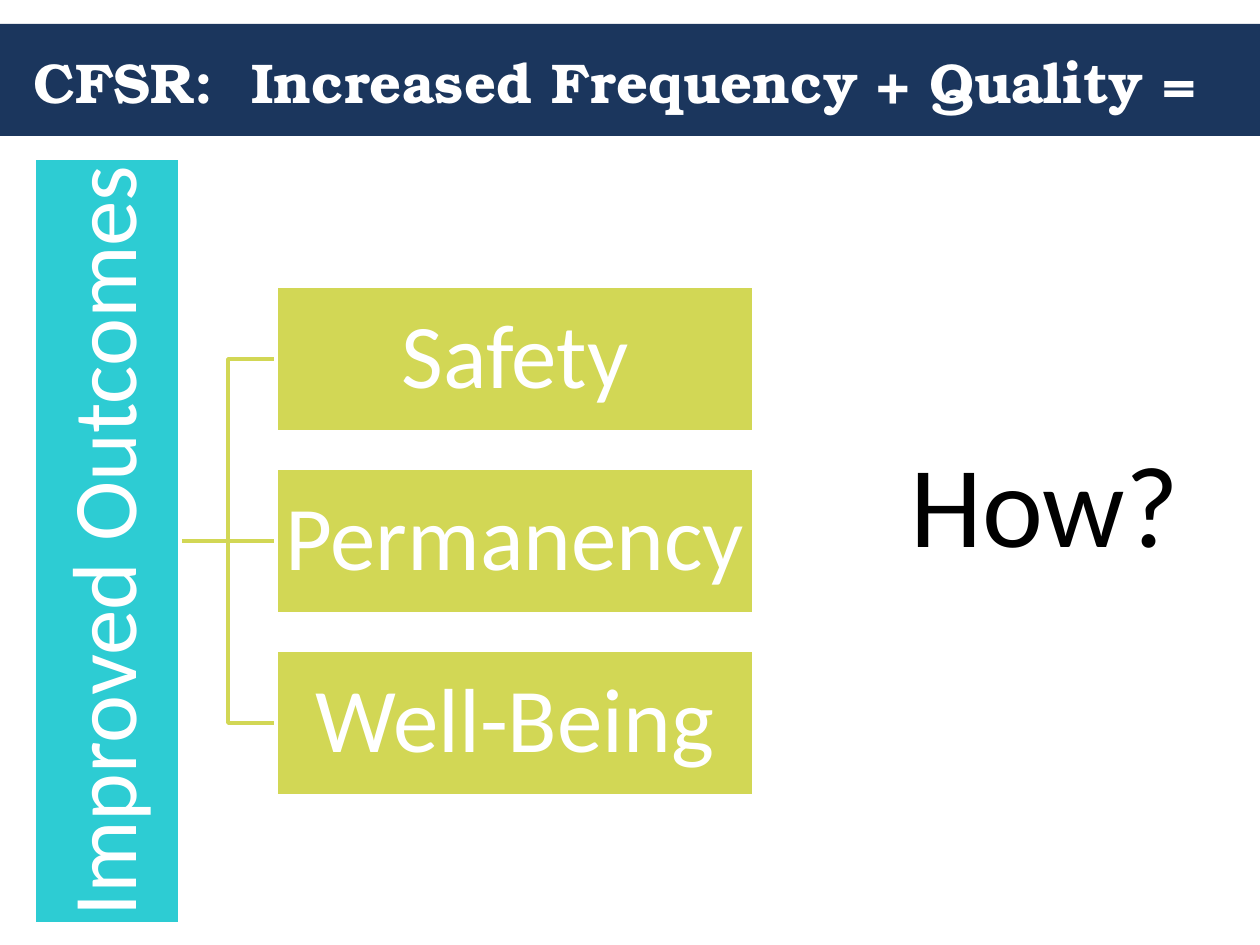
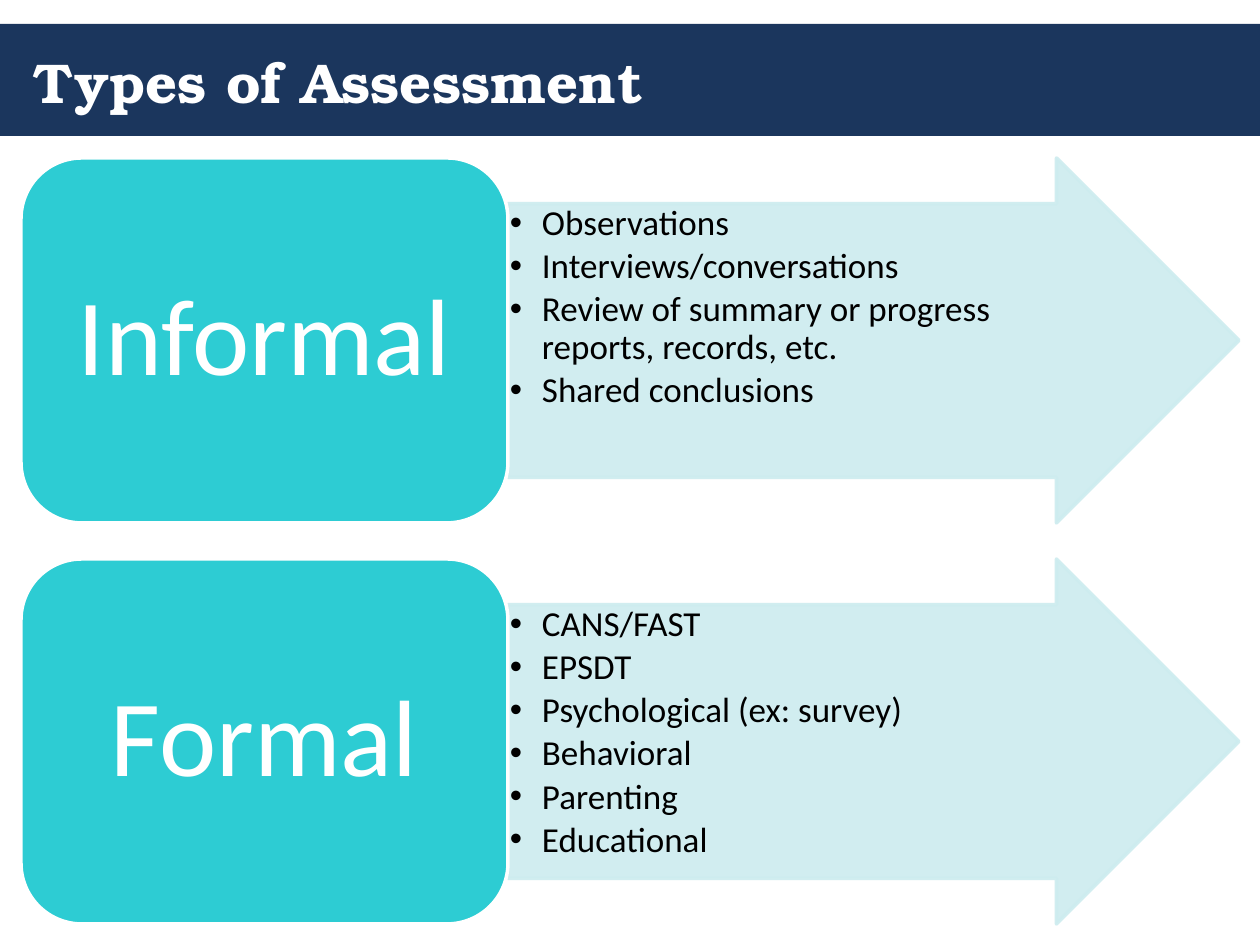
from lxml import etree
from pptx import Presentation
from pptx.dml.color import RGBColor
from pptx.enum.shapes import MSO_CONNECTOR as Link, MSO_SHAPE as Shape
from pptx.enum.text import MSO_ANCHOR as Anchor, PP_ALIGN as Align
from pptx.oxml.ns import qn
from pptx.util import Emu, Pt

OUTCOMES_TITLE = "CFSR:  Increased Frequency + Quality ="
GOAL = "Improved Outcomes"
OUTCOMES = ["Safety", "Permanency", "Well-Being"]
QUESTION = "How?"

TYPES_TITLE = "Types of Assessment"
TYPES = {
    "Informal": [
        "Observations",
        "Interviews/conversations",
        "Review of summary or progress reports, records, etc.",
        "Shared conclusions",
    ],
    "Formal": [
        "CANS/FAST",
        "EPSDT",
        "Psychological (ex: survey)",
        "Behavioral",
        "Parenting",
        "Educational",
    ],
}

NAVY, TEAL, LIME, PALE = "1B365D", "2DCCD3", "D2D755", "CDECEF"
WHITE, BLACK = "FFFFFF", "000000"
TITLE_FONT, BODY_FONT = "TeX Gyre Bonum", "Calibri"
SLIDE_W, SLIDE_H = 1260, 945


def px(length):
    return Emu(round(length * 914400 / 126))


def rgb(hex_code):
    return RGBColor.from_string(hex_code)


def paint(shape, fill, line=None):
    shape.shadow.inherit = False
    shape.fill.solid()
    shape.fill.fore_color.rgb = rgb(fill)
    if line:
        shape.line.color.rgb = rgb(line)
        shape.line.width = Pt(2)
    else:
        shape.line.fill.background()


def add_block(slide, kind, box, fill, line=None):
    block = slide.shapes.add_shape(kind, *map(px, box))
    paint(block, fill, line)
    return block


def write(shape, lines, size, color=WHITE, font=BODY_FONT, bold=False, align=Align.CENTER,
          anchor=Anchor.MIDDLE, insets=(5, 5, 5, 5), spacing=0.9):
    frame = shape.text_frame
    frame.word_wrap = True
    frame.vertical_anchor = anchor
    (frame.margin_left, frame.margin_top,
     frame.margin_right, frame.margin_bottom) = map(px, insets)
    frame.text = "\n".join(lines)
    for paragraph in frame.paragraphs:
        paragraph.alignment = align
        paragraph.line_spacing = spacing
        for run in paragraph.runs:
            run.font.name, run.font.size, run.font.bold = font, Pt(size), bold
            run.font.color.rgb = rgb(color)


def add_bullets(shape, indent, gap):
    for paragraph in shape.text_frame.paragraphs:
        paragraph.space_after = Pt(gap)
        props = paragraph._p.get_or_add_pPr()
        props.set("marL", str(px(indent)))
        props.set("indent", str(-px(indent)))
        etree.SubElement(props, qn("a:buFont")).set("typeface", "Arial")
        etree.SubElement(props, qn("a:buChar")).set("char", "•")


def make_translucent(shape, percent):
    """Apply one opacity to both the fill and the outline."""
    for color in shape._element.spPr.iter(qn("a:srgbClr")):
        etree.SubElement(color, qn("a:alpha")).set("val", str(percent * 1000))


def add_link(slide, start, end):
    kind = Link.STRAIGHT if start[1] == end[1] else Link.ELBOW
    link = slide.shapes.add_connector(kind, *map(px, start + end))
    link.line.color.rgb = rgb(LIME)
    link.line.width = Pt(2)
    etree.SubElement(link._element.spPr, qn("a:effectLst"))


def add_titled_slide(deck, title):
    slide = deck.slides.add_slide(deck.slide_layouts[6])
    band = add_block(slide, Shape.RECTANGLE, (0, 24, SLIDE_W, 112), NAVY)
    write(band, [title], 32, font=TITLE_FONT, bold=True, align=Align.LEFT,
          insets=(34, 7, 34, 5), spacing=1.0)
    return slide


def build_outcomes(deck):
    slide = add_titled_slide(deck, OUTCOMES_TITLE)
    thickness, pitch, center_y = 146, 182, 541
    goal_left, goal_length = 34, 766
    goal_right = goal_left + thickness
    outcome_left, outcome_width = 276, 478
    first_y = center_y - pitch * (len(OUTCOMES) - 1) // 2
    rows = [(name, first_y + i * pitch) for i, name in enumerate(OUTCOMES)]

    for _, y in rows:
        add_link(slide, (goal_right, center_y), (outcome_left, y))

    goal_box = (goal_left + (thickness - goal_length) // 2, center_y - thickness // 2,
                goal_length, thickness)
    goal = add_block(slide, Shape.RECTANGLE, goal_box, TEAL, WHITE)
    goal.rotation = 270
    write(goal, [GOAL], 52)

    for name, y in rows:
        outcome = add_block(slide, Shape.RECTANGLE,
                            (outcome_left, y - thickness // 2, outcome_width, thickness),
                            LIME, WHITE)
        write(outcome, [name], 52)

    question = slide.shapes.add_textbox(*map(px, (829, 426, 431, 152)))
    write(question, [QUESTION], 66, BLACK, anchor=Anchor.TOP,
          insets=(13, 6, 13, 6), spacing=1.0)


def build_types(deck):
    slide = add_titled_slide(deck, TYPES_TITLE)
    top, height, pitch = 158, 365, 401
    label_left, label_width, arrow_width = 21, 487, 731

    for i, (name, examples) in enumerate(TYPES.items()):
        y = top + i * pitch
        arrow = add_block(slide, Shape.RIGHT_ARROW,
                          (label_left + label_width, y, arrow_width, height), PALE, PALE)
        arrow.adjustments[0], arrow.adjustments[1] = 0.75, 0.5
        make_translucent(arrow, 90)
        write(arrow, examples, 20, BLACK, align=Align.LEFT, anchor=Anchor.TOP,
              insets=(2, 2, 92, 1))
        add_bullets(arrow, 32, 3)

        label = add_block(slide, Shape.ROUNDED_RECTANGLE,
                          (label_left, y, label_width, height), TEAL, WHITE)
        write(label, [name], 62, insets=(33, 16, 33, 16))


def main():
    deck = Presentation()
    deck.slide_width, deck.slide_height = px(SLIDE_W), px(SLIDE_H)
    build_outcomes(deck)
    build_types(deck)
    deck.save("out.pptx")


if __name__ == "__main__":
    main()
